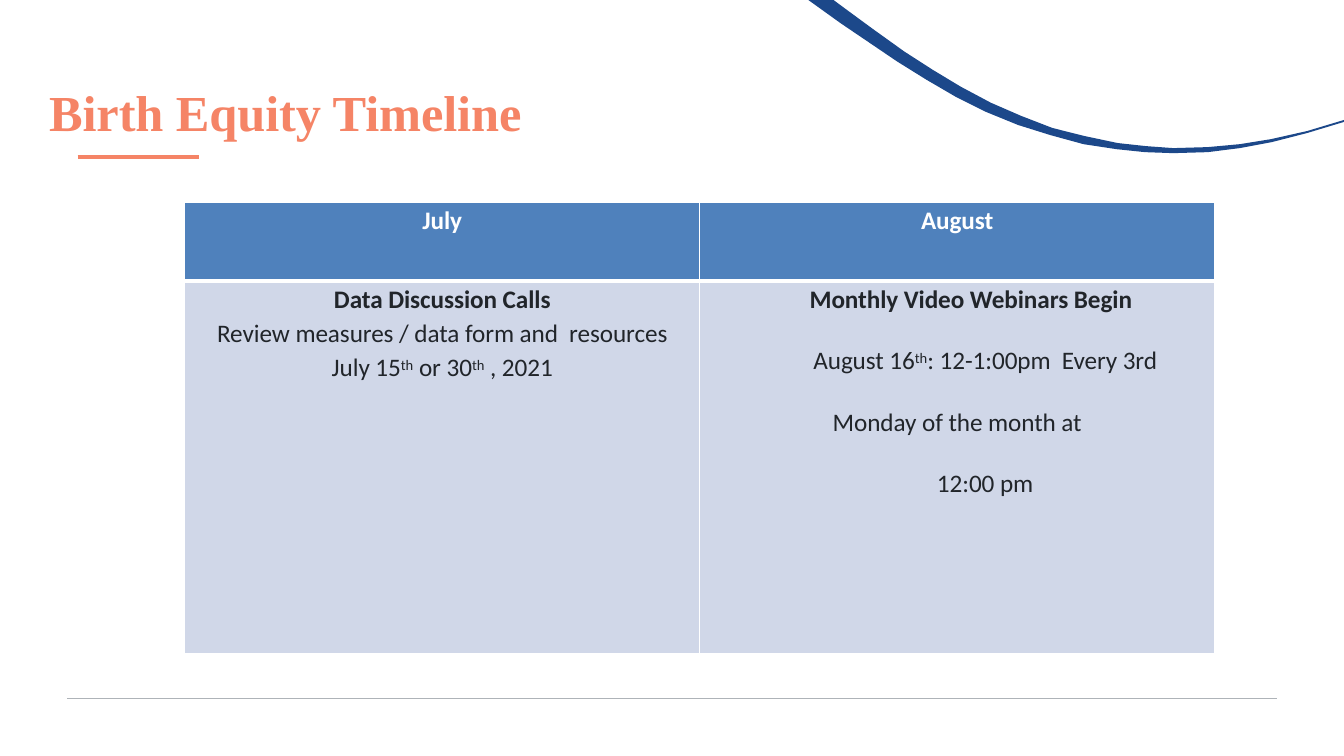
"""Build the Birth Equity Timeline slide."""
from dataclasses import dataclass

from lxml import etree
from pptx import Presentation
from pptx.dml.color import RGBColor
from pptx.enum.shapes import MSO_CONNECTOR
from pptx.enum.text import PP_ALIGN
from pptx.oxml.ns import qn
from pptx.util import Pt

STRAIGHT = MSO_CONNECTOR.STRAIGHT
CENTER = PP_ALIGN.CENTER


@dataclass(frozen=True)
class Theme:
    coral: str = "F58466"
    navy: str = "1C488A"
    rule: str = "AEB3B8"
    header: str = "4F81BC"
    body: str = "D0D7E8"
    ink: str = "21252A"
    white: str = "FFFFFF"
    title_font: str = "Times New Roman"
    table_font: str = "Calibri"
    title_size: int = 36
    table_size: int = 18


theme = Theme()


def rgb(name):
    return RGBColor.from_string(name)


def add_run(p, text, baseline=0):
    r = p.add_run()
    r.text = text
    rPr = r._r.get_or_add_rPr()
    rPr.set("spc", "-5")
    if baseline:
        rPr.set("baseline", str(baseline))


prs = Presentation()
prs.slide_width, prs.slide_height = Pt(960), Pt(540)
s = prs.slides.add_slide(prs.slide_layouts[6])

ribbon = [
    (577.4, 0), (600.5, 16.6), (620.6, 30.2), (640.8, 43.9), (661.7, 56.9),
    (682.6, 69.1), (704.2, 79.9), (727.2, 89.3), (750.2, 96.5), (774, 103),
    (797.8, 106.6), (817.9, 108.7), (838.1, 109.4), (862.6, 108.7),
    (885.6, 105.8), (908.6, 101.5), (933.8, 95), (960, 87.1),
    (960, 85.7), (933.8, 93.6), (907.9, 99.4), (885.6, 103), (862.6, 105.1),
    (838.1, 105.8), (818.6, 104.4), (798.5, 102.2), (774.7, 97.2),
    (751.7, 91.4), (729.4, 82.8), (707.8, 73.4), (686.2, 61.9), (666, 49.7),
    (645.8, 36.7), (622.8, 20.2), (607, 8.6), (595.4, 0),
]
points = [(Pt(x), Pt(y)) for x, y in ribbon]
builder = s.shapes.build_freeform(*points[0], scale=1.0)
builder.add_line_segments(points[1:], close=True)
sp = builder.convert_to_shape()
sp.shadow.inherit = False
sp.fill.solid()
sp.fill.fore_color.rgb = rgb(theme.navy)
sp.line.fill.background()

for left, right, y, color, width in [
    (48, 912, 499, theme.rule, 0.5),
    (55.5, 142, 112.3, theme.coral, 2.5),
]:
    line = s.shapes.add_connector(STRAIGHT, Pt(left), Pt(y), Pt(right), Pt(y))
    line.line.color.rgb = rgb(color)
    line.line.width = Pt(width)
    etree.SubElement(line._element.spPr, qn("a:effectLst"))

title = s.shapes.add_textbox(Pt(35), Pt(57.6), Pt(680), Pt(45))
tf = title.text_frame
tf.word_wrap = True
tf.margin_left = tf.margin_right = tf.margin_bottom = 0
tf.margin_top = Pt(0.7)
p = tf.paragraphs[0]
add_run(p, "Birth Equity Timeline")
p.font.name = theme.title_font
p.font.size = Pt(theme.title_size)
p.font.bold = True
p.font.color.rgb = rgb(theme.coral)

TH = ("th", 25000)
webinar_indent = {"marL": Pt(11), "marR": Pt(11), "indent": Pt(40)}
rows = [
    [
        [(True, 1, {}, [("July",)])],
        [(True, 1, {}, [("August",)])],
    ],
    [
        [
            (True, 1, {}, [("Data Discussion Calls",)]),
            (False, 1, {}, [("Review measures / data form and  resources",)]),
            (False, 1, {}, [("July 15",), TH, (" or 30",), TH, (" , 2021",)]),
        ],
        [
            (True, 1, {"marL": Pt(19.5)}, [("Monthly Video Webinars Begin",)]),
            (False, 2, webinar_indent, [
                ("August 16",), TH,
                (": 12-1:00pm  Every 3rd Monday of the month at",),
            ]),
            (False, 2, webinar_indent, [("12:00 pm",)]),
        ],
    ],
]
row_styles = [
    (56, theme.header, theme.white, {"L": 1, "R": 1, "T": 1, "B": 3}),
    (266.2, theme.body, theme.ink, {"L": 1, "R": 1, "T": 3, "B": 1}),
]
table = s.shapes.add_table(2, 2, Pt(132), Pt(144.9), Pt(735.6), Pt(322.2)).table
table.horz_banding = False
for col in table.columns:
    col.width = Pt(367.8)

for i, (height, fill, color, borders) in enumerate(row_styles):
    table.rows[i].height = Pt(height)
    for j, paragraphs in enumerate(rows[i]):
        cell = table.cell(i, j)
        cell.margin_left = cell.margin_right = cell.margin_bottom = 0
        cell.margin_top = Pt(2.2)
        tcPr = cell._tc.get_or_add_tcPr()
        for side, width in borders.items():
            ln = etree.SubElement(tcPr, qn(f"a:ln{side}"), w=str(Pt(width)))
            solid = etree.SubElement(ln, qn("a:solidFill"))
            etree.SubElement(solid, qn("a:srgbClr"), val=theme.white)
        cell.fill.solid()
        cell.fill.fore_color.rgb = rgb(fill)

        tf = cell.text_frame
        for k, (bold, spacing, indents, runs) in enumerate(paragraphs):
            p = tf.add_paragraph() if k else tf.paragraphs[0]
            p.alignment = CENTER
            p.line_spacing = float(spacing)
            if k and spacing == 1:
                p.space_before = Pt(2.4)
            for name, value in indents.items():
                p._p.get_or_add_pPr().set(name, str(value))
            for run in runs:
                add_run(p, *run)
            p.font.name = theme.table_font
            p.font.size = Pt(theme.table_size)
            p.font.bold = bold
            p.font.color.rgb = rgb(color)

prs.save("out.pptx")
